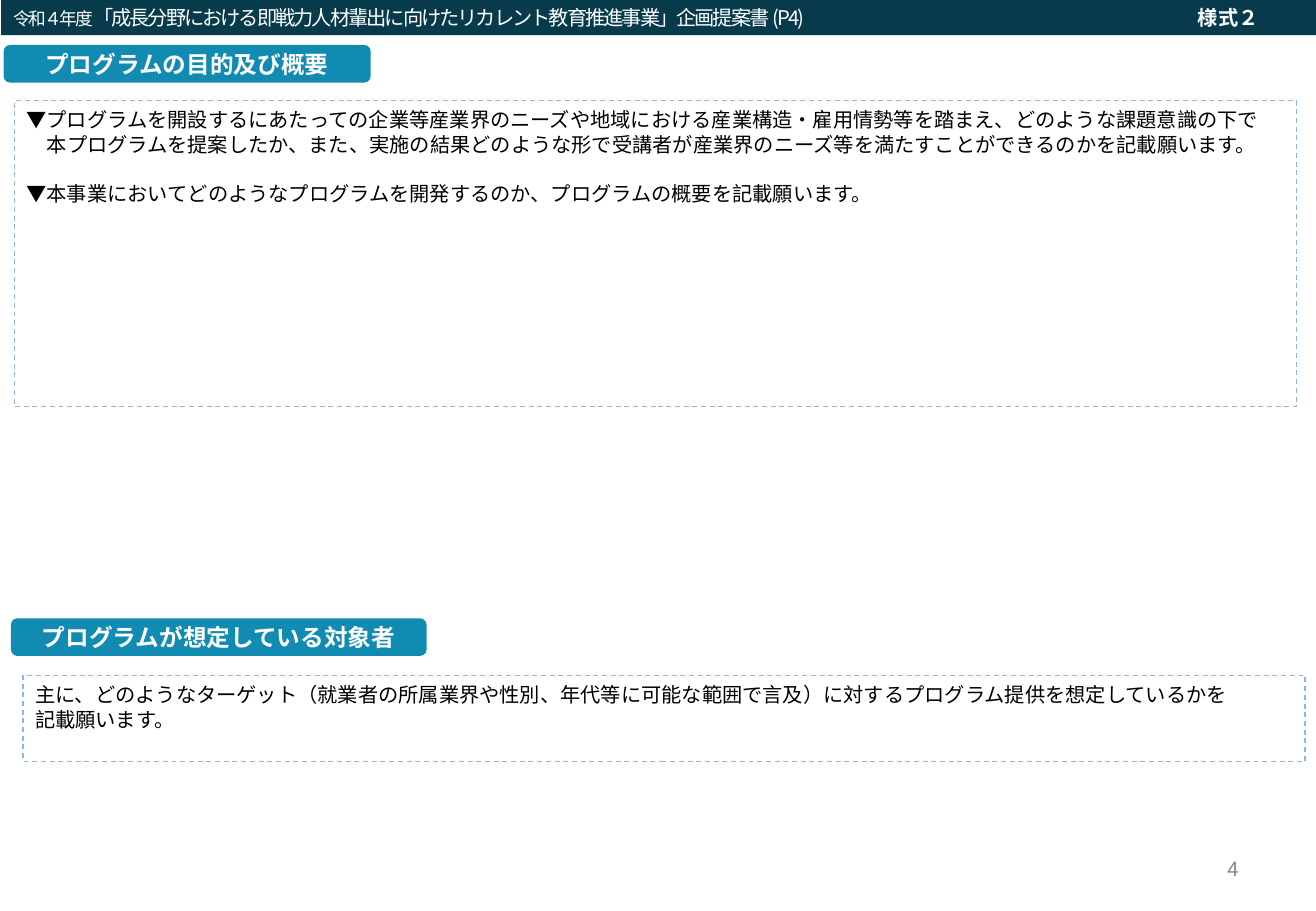
from lxml.etree import SubElement
from pptx import Presentation
from pptx.dml.color import RGBColor
from pptx.enum.dml import MSO_LINE
from pptx.enum.shapes import MSO_SHAPE
from pptx.enum.text import MSO_ANCHOR, PP_ALIGN
from pptx.oxml.ns import qn
from pptx.util import Inches, Pt

TEAL = RGBColor(0x11, 0x8B, 0xB2)
NAVY = RGBColor(0x07, 0x3B, 0x4C)
PALE_BLUE = RGBColor(0x8E, 0xB4, 0xE3)
WHITE = RGBColor(0xFF, 0xFF, 0xFF)
BLACK = RGBColor(0, 0, 0)
GREY = RGBColor(0x8C, 0x8C, 0x8C)

JAPANESE, LATIN = "Noto Sans CJK JP", "Roboto"
COLUMNS, ROWS = 108.3, 75


def set_values(target, values):
    for name, value in values.items():
        setattr(target, name, value)


class ProposalSlide:
    def __init__(self, presentation):
        self.column = presentation.slide_width / COLUMNS
        self.row = presentation.slide_height / ROWS
        self.slide = presentation.slides.add_slide(presentation.slide_layouts[6])

    def place(self, left, top, width, height):
        return (round(left * self.column), round(top * self.row),
                round(width * self.column), round(height * self.row))

    def block(self, kind, area, fill=None, anchor=MSO_ANCHOR.MIDDLE):
        shape = self.slide.shapes.add_shape(kind, *self.place(*area))
        shape.shadow.inherit = False
        if fill is None:
            shape.fill.background()
        else:
            shape.fill.solid()
            shape.fill.fore_color.rgb = fill
        shape.line.fill.background()
        set_values(shape.text_frame, {"word_wrap": True, "vertical_anchor": anchor})
        return shape

    def run(self, paragraph, text, color, size=12, font=JAPANESE, bold=False, spacing=0):
        run = paragraph.add_run()
        run.text = text
        set_values(run.font, {"size": Pt(size), "bold": bold, "name": font})
        run.font.color.rgb = color
        properties = run.font._element
        properties.set("spc", str(round(spacing * 100)))
        SubElement(properties, qn("a:ea")).set("typeface", font)

    def heading(self, text, area, font):
        shape = self.block(MSO_SHAPE.ROUNDED_RECTANGLE, area, TEAL)
        paragraph = shape.text_frame.paragraphs[0]
        paragraph.alignment = PP_ALIGN.CENTER
        self.run(paragraph, text, WHITE, 14, font, bold=True)

    def answer_box(self, area, lines):
        shape = self.block(MSO_SHAPE.RECTANGLE, area, anchor=MSO_ANCHOR.TOP)
        shape.line.color.rgb = PALE_BLUE
        set_values(shape.line, {"width": Pt(0.75), "dash_style": MSO_LINE.DASH})
        frame = shape.text_frame
        for index, (text, indent, space) in enumerate(lines):
            paragraph = frame.add_paragraph() if index else frame.paragraphs[0]
            set_values(paragraph, {"alignment": PP_ALIGN.LEFT, "line_spacing": Pt(14.8),
                                   "space_before": Pt(space)})
            paragraph._p.get_or_add_pPr().set("marL", str(Pt(indent)))
            self.run(paragraph, text, BLACK)

    def title_bar(self, area, runs, tab):
        shape = self.block(MSO_SHAPE.RECTANGLE, area, NAVY)
        paragraph = shape.text_frame.paragraphs[0]
        paragraph.alignment = PP_ALIGN.LEFT
        tabs = SubElement(paragraph._p.get_or_add_pPr(), qn("a:tabLst"))
        stop = SubElement(tabs, qn("a:tab"))
        stop.set("pos", str(round(tab * self.column)))
        stop.set("algn", "l")
        for text, values in runs:
            self.run(paragraph, text, WHITE, **values)

    def page_number(self, number, area):
        frame = self.slide.shapes.add_textbox(*self.place(*area)).text_frame
        set_values(frame, {"word_wrap": True, "vertical_anchor": MSO_ANCHOR.MIDDLE})
        paragraph = frame.paragraphs[0]
        paragraph.alignment = PP_ALIGN.RIGHT
        self.run(paragraph, number, GREY, font=LATIN)


def main():
    presentation = Presentation()
    set_values(presentation, {"slide_width": Inches(10.83), "slide_height": Inches(7.5)})
    page = ProposalSlide(presentation)

    # Purpose and outline: text, indent and space before in points
    page.heading("プログラムの目的及び概要", (0.3, 3.7, 30.2, 3.1), JAPANESE)
    page.answer_box((1.2, 8.3, 105.5, 25.2), [
        ("▼プログラムを開設するにあたっての企業等産業界のニーズや地域における産業構造・雇用情勢等を踏まえ、どのような課題意識の下で", 0, 0),
        ("本プログラムを提案したか、また、実施の結果どのような形で受講者が産業界のニーズ等を満たすことができるのかを記載願います。", 12, 0),
        ("▼本事業においてどのようなプログラムを開発するのか、プログラムの概要を記載願います。", 0, 14),
    ])

    # Target audience
    page.heading("プログラムが想定している対象者", (0.9, 50.9, 34.2, 3.1), LATIN)
    page.answer_box((1.9, 55.6, 105.5, 7.1), [
        ("主に、どのようなターゲット（就業者の所属業界や性別、年代等に可能な範囲で言及）に対するプログラム提供を想定しているかを", 0, 0),
        ("記載願います。", 0, 0),
    ])

    # Title bar and page number
    page.title_bar((0.1, 0, 108.3, 2.9), [
        ("令和４年度", {"size": 10.5, "spacing": -1.2}),
        ("「成長分野における即戦力人材輩出に向けたリカレント教育推進事業」企画提案書 (P4)", {"spacing": -1.2}),
        ("\t様式２", {"font": LATIN, "bold": True}),
    ], tab=97.5)
    page.page_number("4", (77.6, 69.5, 25.3, 4))

    presentation.save("out.pptx")


if __name__ == "__main__":
    main()
